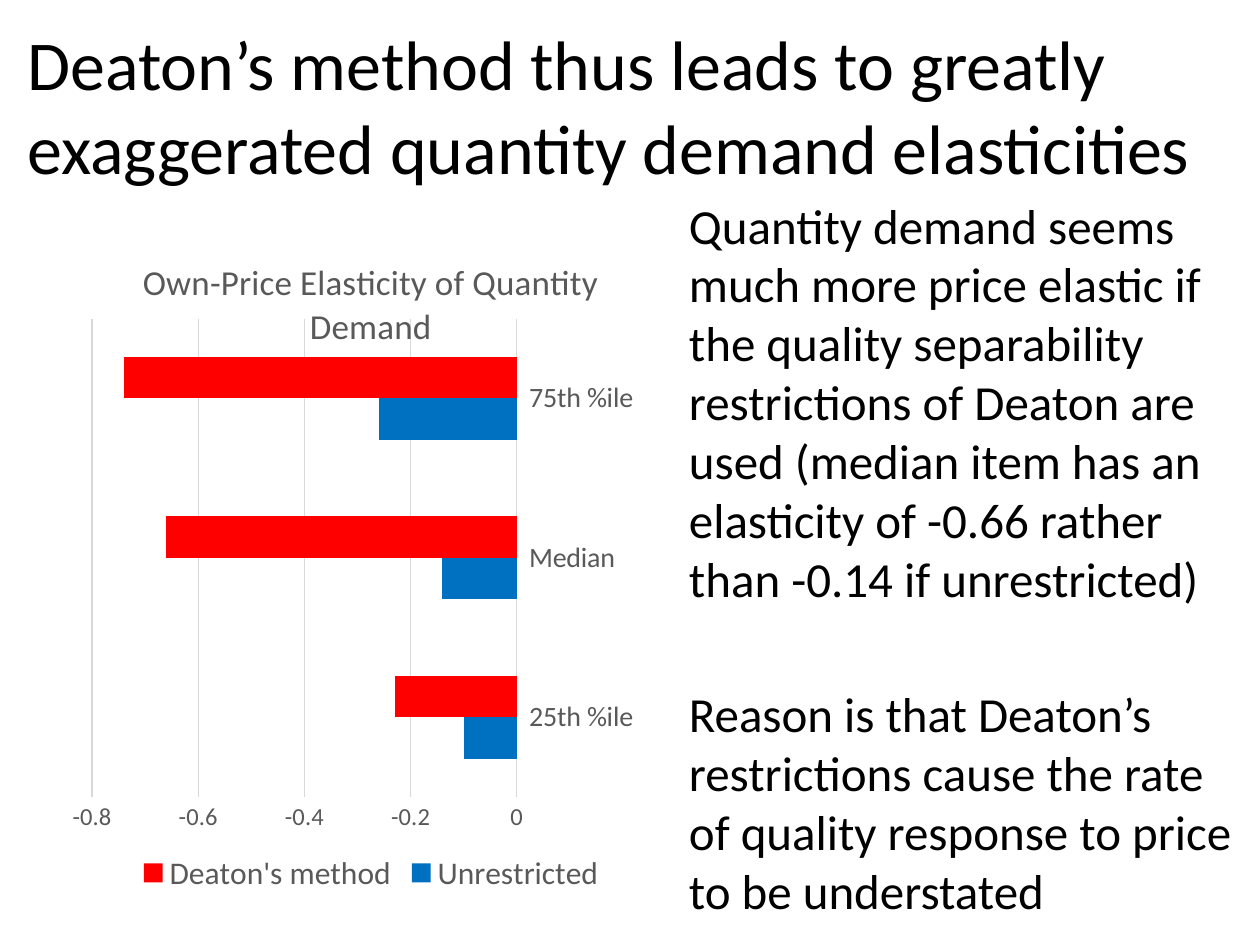
from dataclasses import dataclass

from lxml import etree
from pptx import Presentation
from pptx.chart.data import CategoryChartData
from pptx.dml.color import RGBColor
from pptx.enum.chart import (XL_CHART_TYPE, XL_LEGEND_POSITION, XL_TICK_LABEL_POSITION,
                             XL_TICK_MARK)
from pptx.enum.text import MSO_ANCHOR, MSO_AUTO_SIZE, PP_ALIGN
from pptx.oxml.ns import qn
from pptx.util import Cm, Pt

BARS = XL_CHART_TYPE.BAR_CLUSTERED
LEGEND_BOTTOM = XL_LEGEND_POSITION.BOTTOM
LABELS_HIGH = XL_TICK_LABEL_POSITION.HIGH
NO_TICK = XL_TICK_MARK.NONE
LEFT = PP_ALIGN.LEFT
TOP, BOTTOM = MSO_ANCHOR.TOP, MSO_ANCHOR.BOTTOM
NO_AUTOFIT = MSO_AUTO_SIZE.NONE
TITLE_ONLY = 5


@dataclass(frozen=True)
class Theme:
    font: str = "Calibri"
    text: RGBColor = RGBColor(0x00, 0x00, 0x00)
    chart_text: RGBColor = RGBColor(0x59, 0x59, 0x59)
    grid: RGBColor = RGBColor(0xD9, 0xD9, 0xD9)
    unrestricted: RGBColor = RGBColor(0x00, 0x70, 0xC0)
    deaton: RGBColor = RGBColor(0xFF, 0x00, 0x00)
    title: int = 40
    body: int = 28
    chart_title: int = 20
    legend: int = 18
    categories: int = 16
    values: int = 14


THEME = Theme()

HEADLINE = "Deaton’s method thus leads to greatly exaggerated quantity demand elasticities"
FINDINGS = [
    "Quantity demand seems much more price elastic if the quality separability "
    "restrictions of Deaton are used (median item has an elasticity of -0.66 rather "
    "than -0.14 if unrestricted)",
    "Reason is that Deaton’s restrictions cause the rate of quality response to price "
    "to be understated",
]
PERCENTILES = ["25th %ile", "Median", "75th %ile"]
ELASTICITIES = [
    ("Unrestricted", (-0.1, -0.14, -0.26), THEME.unrestricted),
    ("Deaton's method", (-0.23, -0.66, -0.74), THEME.deaton),
]


def style_font(font, size, color):
    font.name = THEME.font
    font.size = Pt(size)
    font.bold = False
    font.color.rgb = color


def write_paragraphs(frame, texts, size, anchor, gap=0):
    frame.word_wrap = True
    frame.auto_size = NO_AUTOFIT
    frame.vertical_anchor = anchor
    for index, text in enumerate(texts):
        paragraph = frame.add_paragraph() if index else frame.paragraphs[0]
        paragraph.alignment = LEFT
        paragraph.line_spacing = 1.0
        paragraph.space_before = Pt(gap if index else 0)
        run = paragraph.add_run()
        run.text = text
        style_font(run.font, size, THEME.text)


def add_headline(slide):
    title = slide.shapes.title
    title.left, title.top, title.width, title.height = Cm(0.3), Cm(0.74), Cm(24.59), Cm(3.18)
    write_paragraphs(title.text_frame, [HEADLINE], THEME.title, BOTTOM)


def add_findings(slide):
    box = slide.shapes.add_textbox(Cm(13.64), Cm(3.81), Cm(11.76), Cm(13.61))
    write_paragraphs(box.text_frame, FINDINGS, THEME.body, TOP, gap=44)


def set_layout(parent, **settings):
    """Give a chart title or plot area a manual layout, in fractions of the chart."""
    layout = parent.find(qn("c:layout"))
    if layout is None:
        layout = etree.Element(qn("c:layout"))
        text = parent.find(qn("c:tx"))
        parent.insert(0 if text is None else 1, layout)
    manual = etree.SubElement(layout, qn("c:manualLayout"))
    for name, value in settings.items():
        etree.SubElement(manual, qn(f"c:{name}")).set("val", str(value))


def style_axis(axis, size):
    axis.major_tick_mark = axis.minor_tick_mark = NO_TICK
    style_font(axis.tick_labels.font, size, THEME.chart_text)


def add_elasticity_chart(slide):
    data = CategoryChartData()
    data.categories = PERCENTILES
    for name, values, _ in ELASTICITIES:
        data.add_series(name, values)
    chart = slide.shapes.add_chart(BARS, Cm(1.09), Cm(4.52), Cm(12.78), Cm(13.59), data).chart
    style_font(chart.font, THEME.values, THEME.chart_text)

    # Bars
    plot = chart.plots[0]
    plot.gap_width = 182
    plot.vary_by_categories = False
    for series, (_, _, color) in zip(plot.series, ELASTICITIES):
        series.invert_if_negative = False
        series.format.fill.solid()
        series.format.fill.fore_color.rgb = color

    # Axes
    percentile_axis, value_axis = chart.category_axis, chart.value_axis
    style_axis(percentile_axis, THEME.categories)
    percentile_axis.tick_label_position = LABELS_HIGH
    style_axis(value_axis, THEME.values)
    value_axis.minimum_scale, value_axis.maximum_scale = -0.8, 0
    value_axis.major_unit = 0.2
    value_axis.format.line.fill.background()
    for line in (percentile_axis.format.line, value_axis.major_gridlines.format.line):
        line.color.rgb = THEME.grid
        line.width = Pt(0.75)

    # Title and legend
    run = chart.chart_title.text_frame.paragraphs[0].add_run()
    run.text = "Own-Price Elasticity of Quantity Demand"
    style_font(run.font, THEME.chart_title, THEME.chart_text)
    chart.has_legend = True
    chart.legend.position = LEGEND_BOTTOM
    chart.legend.include_in_layout = False
    style_font(chart.legend.font, THEME.legend, THEME.chart_text)

    # Placement inside the chart
    set_layout(chart.chart_title._element, xMode="edge", yMode="edge", x=0.13, y=0.04)
    plot_area = chart._chartSpace.chart.plotArea
    set_layout(plot_area, layoutTarget="inner", xMode="edge", yMode="edge",
               x=0.06, y=0.14, w=0.67, h=0.71)


def main():
    deck = Presentation()
    deck.slide_width, deck.slide_height = Cm(25.4), Cm(19.05)
    slide = deck.slides.add_slide(deck.slide_layouts[TITLE_ONLY])
    add_headline(slide)
    add_elasticity_chart(slide)
    add_findings(slide)
    deck.save("out.pptx")


if __name__ == "__main__":
    main()
